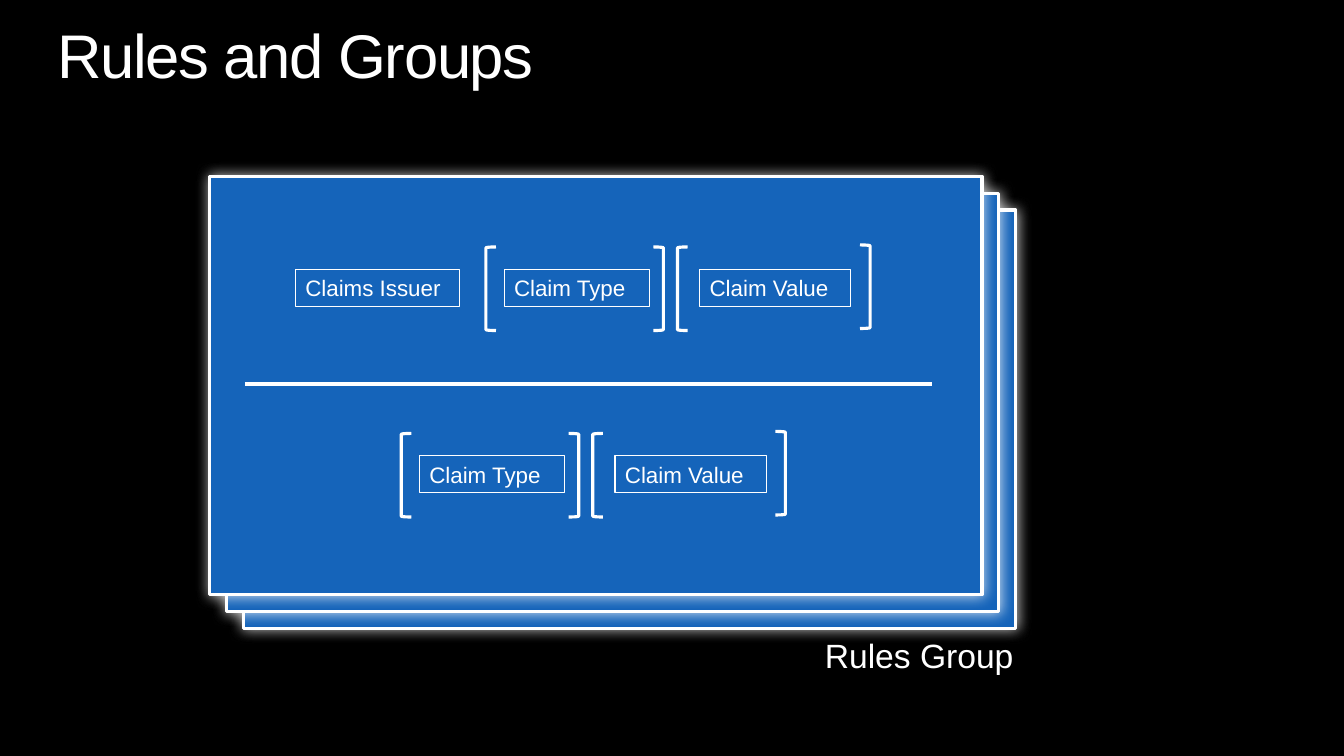
from lxml.etree import SubElement as Sub
from pptx import Presentation
from pptx.dml.color import RGBColor as Rgb
from pptx.enum.shapes import MSO_CONNECTOR as Line, MSO_SHAPE as Shape
from pptx.enum.text import PP_ALIGN as Align
from pptx.oxml.ns import qn
from pptx.util import Inches, Pt

COLORS = {"back": "000000", "card": "1564BA", "ink": "FFFFFF"}


def color(name):
    """Return a named colour."""
    return Rgb.from_string(COLORS[name])


def write(shape, text, size=16, align=Align.LEFT, inset=(0.1, 0.05),
          space=None, track=None):
    """Fill a shape with one formatted paragraph."""
    frame = shape.text_frame
    frame.word_wrap = True
    frame.margin_left = frame.margin_right = Inches(inset[0])
    frame.margin_top = frame.margin_bottom = Inches(inset[1])
    para = frame.paragraphs[0]
    para.alignment = align
    para.line_spacing = space
    run = para.add_run()
    run.text = text
    run.font.name = "Arial"
    run.font.size = Pt(size)
    run.font.color.rgb = color("ink")
    if track is not None:
        run._r.get_or_add_rPr().set("spc", str(track))


def label(shapes, box, text, **form):
    """Add a plain text box."""
    write(shapes.add_textbox(*map(Inches, box)), text, **form)


def draw(shapes, kind, box, width, fill=None):
    """Add an outlined shape without a shadow."""
    shape = shapes.add_shape(kind, *map(Inches, box))
    shape.shadow.inherit = False
    shape.line.color.rgb = color("ink")
    shape.line.width = Pt(width)
    if fill:
        shape.fill.solid()
        shape.fill.fore_color.rgb = color(fill)
    else:
        shape.fill.background()
    return shape


def card(shapes, left, top):
    """Add a rule card with a soft white halo."""
    shape = draw(shapes, Shape.RECTANGLE, (left, top, 7.66, 4.15), 2.25, "card")
    effects = shape._element.spPr.find(qn("a:effectLst"))
    halo = Sub(effects, qn("a:outerShdw"), blurRad=str(Pt(10)), dist="0",
               dir="0", algn="ctr", rotWithShape="0")
    tint = Sub(halo, qn("a:srgbClr"), val=COLORS["ink"])
    Sub(tint, qn("a:alpha"), val="75000")


def field(shapes, left, top, width, text):
    """Add a framed field name."""
    write(draw(shapes, Shape.RECTANGLE, (left, top, width, 0.37), 0.75), text)


def bracket(shapes, left, top, flip=False):
    """Add a bracket, opening when flipped."""
    shape = draw(shapes, Shape.RIGHT_BRACKET, (left, top, 0.1, 0.83), 2.25)
    if flip:
        shape._element.spPr.find(qn("a:xfrm")).set("flipH", "1")


def claim(shapes, left, top):
    """Add a bracketed claim type and claim value."""
    parts = (("Claim Type", 0, 0.18, 1.44, 1.66, 0),
             ("Claim Value", 1.9, 2.12, 1.5, 3.71, -0.02))
    for text, start, inner, width, end, lift in parts:
        group = shapes.add_group_shape().shapes
        field(group, left + inner, top + 0.22, width, text)
        bracket(group, left + end, top + lift)
        bracket(group, left + start, top, flip=True)


def rule(shapes, left, right, top):
    """Add a level dividing line."""
    line = shapes.add_connector(Line.STRAIGHT, Inches(left), Inches(top),
                                Inches(right), Inches(top))
    line.line.color.rgb = color("ink")
    line.line.width = Pt(3)
    Sub(line._element.spPr, qn("a:effectLst"))


def main():
    """Build the slide."""
    deck = Presentation()
    deck.slide_width, deck.slide_height = Inches(13.33), Inches(7.5)
    slide = deck.slides.add_slide(deck.slide_layouts[6])
    slide.background.fill.solid()
    slide.background.fill.fore_color.rgb = color("back")
    shapes = slide.shapes

    label(shapes, (0.57, 0.25, 12.19, 0.67), "Rules and Groups", size=44,
          inset=(0, 0), space=0.9, track=-100)
    for step in (2, 1, 0):
        card(shapes, 2.08 + step / 6, 1.75 + step / 6)
    field(shapes, 2.93, 2.67, 1.63, "Claims Issuer")
    claim(shapes, 4.82, 2.45)
    rule(shapes, 2.43, 9.24, 3.81)
    claim(shapes, 3.98, 4.3)
    label(shapes, (7.78, 6.25, 2.37, 0.5), "Rules Group", size=24,
          align=Align.RIGHT)
    deck.save("out.pptx")


if __name__ == "__main__":
    main()
